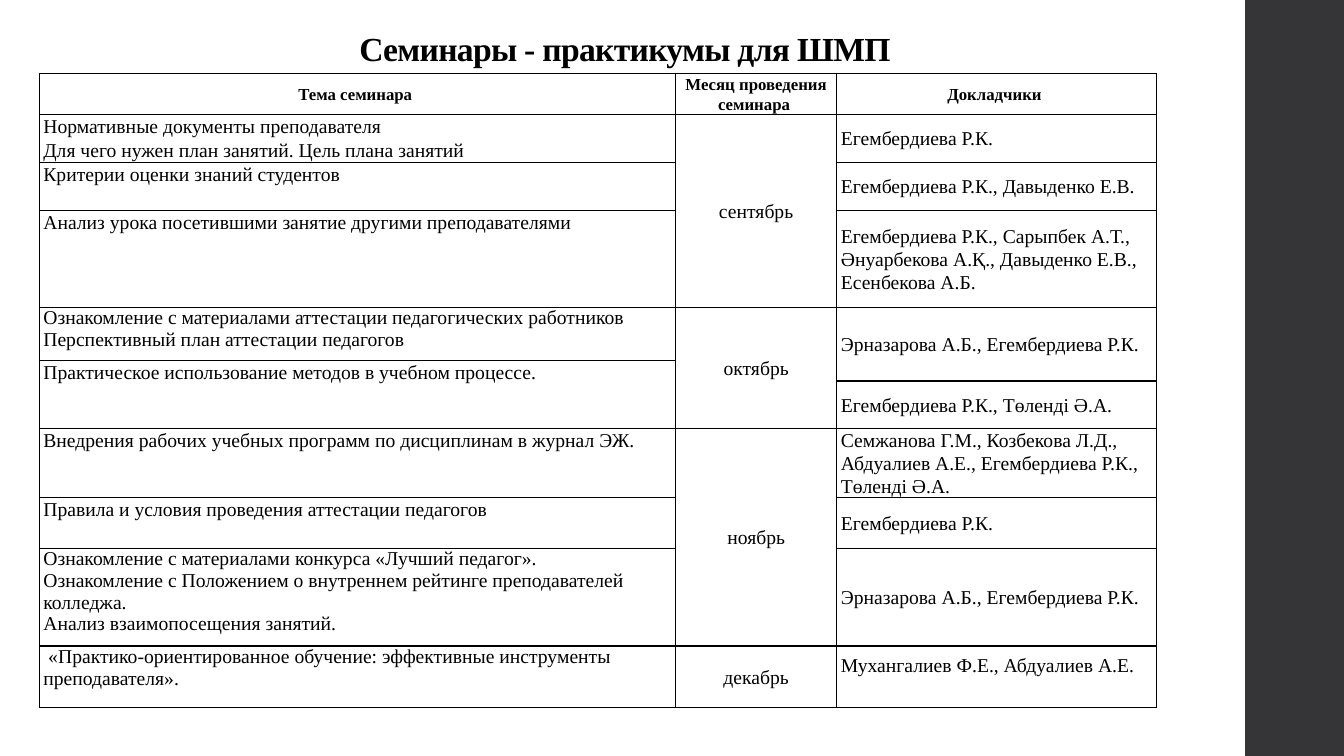
from dataclasses import dataclass

from lxml.etree import SubElement
from pptx import Presentation
from pptx.dml.color import RGBColor
from pptx.enum.shapes import MSO_SHAPE
from pptx.enum.text import MSO_ANCHOR, MSO_AUTO_SIZE, PP_ALIGN
from pptx.oxml.ns import qn
from pptx.slide import Slide
from pptx.table import Table, _Cell
from pptx.util import Inches, Pt

FONT = "Times New Roman"
BLACK = "000000"
COLUMN_WIDTHS = [6.31, 1.6, 3.17]
ROW_HEIGHTS = [0.41, 0.47, 0.48, 0.96, 0.53, 0.2, 0.47, 0.68, 0.5, 0.97, 0.61]
TOPIC, MONTH, SPEAKERS = range(3)


@dataclass(frozen=True)
class Style:
    align: PP_ALIGN
    anchor: MSO_ANCHOR = MSO_ANCHOR.MIDDLE
    spacing: float = 1.07
    size: int = 14
    bold: bool = False
    bottom: float = 0


@dataclass(frozen=True)
class Entry:
    row: int
    column: int
    text: str
    style: Style
    rows: int = 1


HEADER = Style(PP_ALIGN.CENTER, size=12, bold=True)
JUSTIFIED = Style(PP_ALIGN.JUSTIFY, MSO_ANCHOR.TOP)
COMPACT = Style(PP_ALIGN.LEFT, MSO_ANCHOR.TOP, spacing=1)
CENTERED = Style(PP_ALIGN.CENTER)
NAMES = Style(PP_ALIGN.LEFT)
RAISED_NAMES = Style(PP_ALIGN.LEFT, bottom=0.24)

ENTRIES = [
    Entry(0, TOPIC, "Тема семинара ", HEADER),
    Entry(0, MONTH, "Месяц проведения семинара ", HEADER),
    Entry(0, SPEAKERS, "Докладчики ", HEADER),
    Entry(1, TOPIC, "Нормативные документы преподавателя\n"
          "Для чего нужен план занятий. Цель плана занятий", JUSTIFIED),
    Entry(2, TOPIC, "Критерии оценки знаний студентов", JUSTIFIED),
    Entry(3, TOPIC, "Анализ урока посетившими занятие другими преподавателями", JUSTIFIED),
    Entry(4, TOPIC, "Ознакомление с материалами аттестации педагогических работников\n"
          "Перспективный план аттестации педагогов", COMPACT),
    Entry(5, TOPIC, "Практическое использование методов в учебном процессе. ", JUSTIFIED, 2),
    Entry(7, TOPIC, "Внедрения рабочих учебных программ по дисциплинам в журнал ЭЖ. ", JUSTIFIED),
    Entry(8, TOPIC, "Правила и условия проведения аттестации педагогов", JUSTIFIED),
    Entry(9, TOPIC, "Ознакомление с материалами конкурса «Лучший педагог».\n"
          "Ознакомление с Положением о внутреннем рейтинге преподавателей колледжа.\n"
          "Анализ взаимопосещения занятий.", COMPACT),
    Entry(10, TOPIC, " «Практико-ориентированное обучение: эффективные инструменты "
          "преподавателя».", COMPACT),
    Entry(1, MONTH, "сентябрь", CENTERED, 3),
    Entry(4, MONTH, "октябрь", CENTERED, 3),
    Entry(7, MONTH, "ноябрь", CENTERED, 3),
    Entry(10, MONTH, "декабрь", CENTERED),
    Entry(1, SPEAKERS, "Егембердиева Р.К.", NAMES),
    Entry(2, SPEAKERS, "Егембердиева Р.К., Давыденко Е.В.", NAMES),
    Entry(3, SPEAKERS, "Егембердиева Р.К., Сарыпбек А.Т., Әнуарбекова А.Қ., "
          "Давыденко Е.В., Есенбекова А.Б.", NAMES),
    Entry(4, SPEAKERS, "Эрназарова А.Б., Егембердиева Р.К.", NAMES, 2),
    Entry(6, SPEAKERS, "Егембердиева Р.К., Төленді Ә.А.", NAMES),
    Entry(7, SPEAKERS, "Семжанова Г.М., Козбекова Л.Д., Абдуалиев А.Е., "
          "Егембердиева Р.К., Төленді Ә.А.", NAMES),
    Entry(8, SPEAKERS, "Егембердиева Р.К.", NAMES),
    Entry(9, SPEAKERS, "Эрназарова А.Б., Егембердиева Р.К.", NAMES),
    Entry(10, SPEAKERS, "Мухангалиев Ф.Е., Абдуалиев А.Е.", RAISED_NAMES),
]


def color(value: str) -> RGBColor:
    return RGBColor.from_string(value)


def format_text(frame, style: Style) -> None:
    for para in frame.paragraphs:
        para.alignment = style.align
        para.line_spacing = style.spacing
        para.font.name = FONT
        para.font.size = Pt(style.size)
        para.font.bold = style.bold
        para.font.color.rgb = color(BLACK)


def add_sidebar(page: Slide) -> None:
    sidebar = page.shapes.add_shape(
        MSO_SHAPE.RECTANGLE, Inches(12.35), 0, Inches(0.98), Inches(7.5))
    sidebar.shadow.inherit = False
    sidebar.fill.solid()
    sidebar.fill.fore_color.rgb = color("353537")
    sidebar.line.fill.background()


def add_title(page: Slide) -> None:
    title = page.shapes.title
    title.left, title.top = Inches(0.47), Inches(0.28)
    title.width, title.height = Inches(11.53), Inches(0.45)
    frame = title.text_frame
    frame.text = "Семинары - практикумы для ШМП "
    frame.word_wrap = True
    frame.auto_size = MSO_AUTO_SIZE.NONE
    frame.vertical_anchor = MSO_ANCHOR.BOTTOM
    format_text(frame, Style(PP_ALIGN.CENTER, spacing=0.9, size=24, bold=True))
    span = frame.paragraphs[0].runs[0]
    span.font._element.set("spc", "-50")


def style_cell(cell: _Cell) -> None:
    properties = cell._tc.get_or_add_tcPr()
    for side in ("a:lnL", "a:lnR", "a:lnT", "a:lnB"):
        border = SubElement(properties, qn(side), w=str(Pt(1)))
        fill = SubElement(border, qn("a:solidFill"))
        SubElement(fill, qn("a:srgbClr"), val=BLACK)
    cell.fill.background()
    cell.margin_left = cell.margin_right = Inches(0.04)
    cell.margin_top = cell.margin_bottom = 0


def fill_entry(table: Table, entry: Entry) -> None:
    cell = table.cell(entry.row, entry.column)
    if entry.rows > 1:
        cell.merge(table.cell(entry.row + entry.rows - 1, entry.column))
    cell.text = entry.text
    cell.vertical_anchor = entry.style.anchor
    cell.margin_bottom = Inches(entry.style.bottom)
    format_text(cell.text_frame, entry.style)


def add_schedule(page: Slide) -> None:
    table = page.shapes.add_table(
        len(ROW_HEIGHTS), len(COLUMN_WIDTHS), Inches(0.39), Inches(0.73),
        Inches(sum(COLUMN_WIDTHS)), Inches(sum(ROW_HEIGHTS))).table
    table.first_row = table.horz_banding = False
    for column, width in zip(table.columns, COLUMN_WIDTHS):
        column.width = Inches(width)
    for row, height in zip(table.rows, ROW_HEIGHTS):
        row.height = Inches(height)
    for cell in table.iter_cells():
        style_cell(cell)
        format_text(cell.text_frame, NAMES)
    for entry in ENTRIES:
        fill_entry(table, entry)


def main() -> None:
    deck = Presentation()
    deck.slide_width, deck.slide_height = Inches(13.33), Inches(7.5)
    page = deck.slides.add_slide(deck.slide_layouts[5])
    add_sidebar(page)
    add_title(page)
    add_schedule(page)
    deck.save("out.pptx")


if __name__ == "__main__":
    main()
